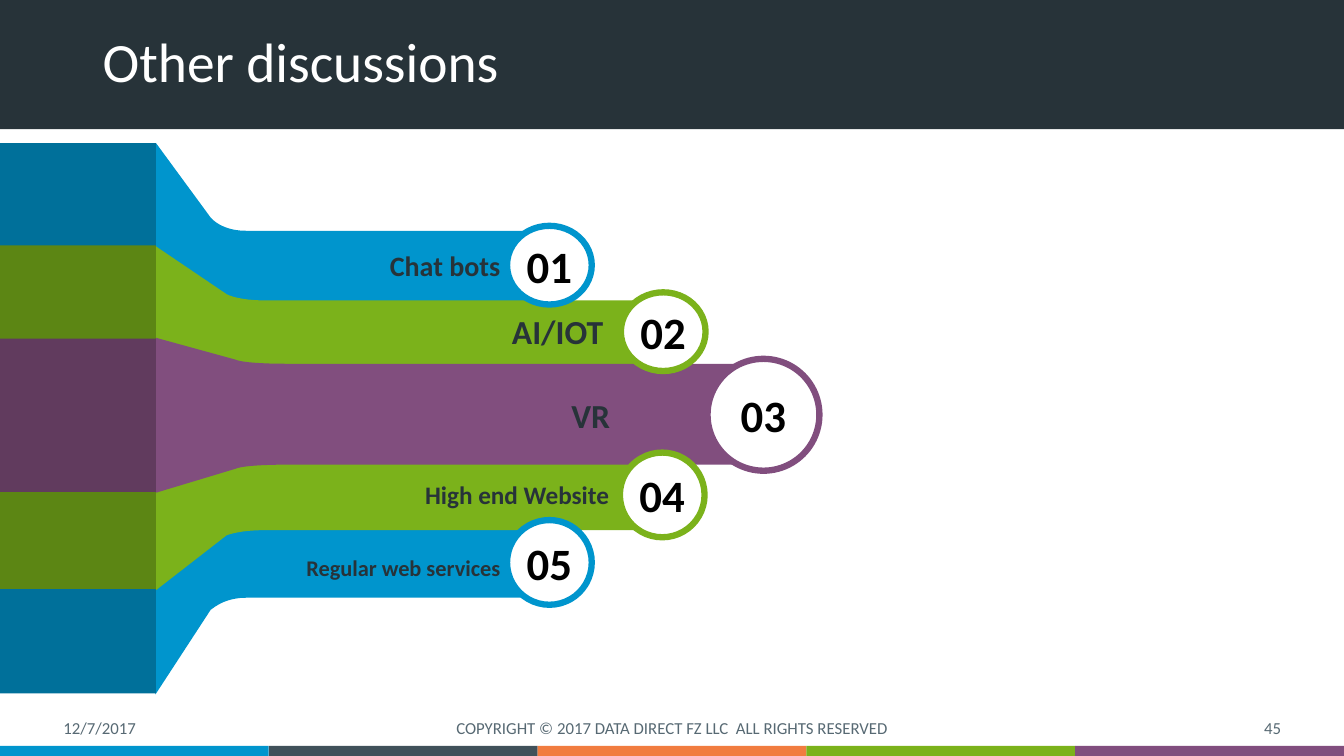
"""Build the "Other discussions" slide: five ribbons fanning out to numbered topics."""
from dataclasses import dataclass
from typing import Iterator

from pptx import Presentation
from pptx.dml.color import RGBColor
from pptx.enum.shapes import MSO_SHAPE
from pptx.enum.text import MSO_ANCHOR, MSO_AUTO_SIZE, PP_ALIGN
from pptx.shapes.autoshape import Shape
from pptx.shapes.shapetree import SlideShapes
from pptx.text.text import TextFrame
from pptx.util import Pt

WHITE = RGBColor(0xFF, 0xFF, 0xFF)
BLACK = RGBColor(0x00, 0x00, 0x00)
INK = RGBColor(0x27, 0x33, 0x39)
SLATE = RGBColor(0x40, 0x51, 0x5A)
GREY = RGBColor(0x57, 0x69, 0x73)
ORANGE = RGBColor(0xF1, 0x7C, 0x3F)
BLUE = RGBColor(0x00, 0x95, 0xCD)
GREEN = RGBColor(0x7B, 0xB2, 0x1B)
PURPLE = RGBColor(0x81, 0x4E, 0x7E)
DARK_BLUE = RGBColor(0x00, 0x70, 0x9A)
DARK_GREEN = RGBColor(0x5C, 0x86, 0x14)
DARK_PURPLE = RGBColor(0x61, 0x3B, 0x5E)

FONT = "Calibri"
SLIDE_WIDTH, SLIDE_HEIGHT = 960, 540
STRIPE_COLORS = (BLUE, SLATE, ORANGE, GREEN, PURPLE)
STRIPE_TOP, STRIPE_HEIGHT = 532.8, 7.2
ROOT_WIDTH = 111.4
BEND_STEPS = 12

Point = tuple[float, float]
Box = tuple[float, float, float, float]


@dataclass(frozen=True)
class Edge:
    """One ribbon edge: its root corner, then the cubic bend into the level run."""
    corner: Point
    bend: tuple[Point, Point, Point, Point]

    def points(self) -> list[Point]:
        """Return the corner followed by points along the bend."""
        return [self.corner, *bend_points(self.bend)]


@dataclass(frozen=True)
class Ribbon:
    """A ribbon that reaches from the root block to its right end."""
    color: RGBColor
    right: float
    upper: Edge
    lower: Edge


@dataclass(frozen=True)
class Root:
    """A dark block at the left margin."""
    color: RGBColor
    top: float
    height: float


@dataclass(frozen=True)
class Topic:
    """A topic label with its numbered badge."""
    label: str
    label_box: Box
    size: float
    badge_box: Box
    color: RGBColor


@dataclass(frozen=True)
class FooterItem:
    """A piece of footer text."""
    text: str
    left: float
    width: float
    align: PP_ALIGN


RIBBONS = (
    Ribbon(BLUE, 401,
           Edge((111.4, 102.2), ((150.5, 155.5), (151.2, 156.2), (158.4, 164.9), (175.7, 164.9))),
           Edge((111, 496.1), ((150.5, 435.6), (151.9, 434.9), (159.8, 427), (175.7, 427)))),
    Ribbon(GREEN, 462.2,
           Edge((111, 175.7), ((162, 210.2), (166.3, 212.4), (175.7, 214.6), (189.4, 214.6))),
           Edge((111, 421.9), ((162, 382.3), (166.3, 380.9), (174.2, 378.7), (189.4, 378.7)))),
    Ribbon(PURPLE, 540.7,
           Edge((111, 241.2), ((168.5, 257), (168.5, 257), (172.8, 259.9), (207.4, 259.9))),
           Edge((111, 352.1), ((168.5, 334.8), (168.5, 334.8), (172.8, 331.9), (207.4, 331.9)))),
)
ROOTS = (
    Root(DARK_BLUE, 102.2, 393.1),
    Root(DARK_GREEN, 175.2, 245.5),
    Root(DARK_PURPLE, 241.9, 109.4),
)
TOPICS = (
    Topic("Chat bots", (271.4, 173.5, 94.3, 31.7), 20, (362.2, 161.3, 60.5, 56.2), BLUE),
    Topic("AI/IOT", (358.6, 218.2, 85.7, 36), 24, (443.5, 208.8, 60.5, 56.2), GREEN),
    Topic("VR", (401, 278.6, 42.5, 36), 24, (505.4, 256.3, 79.9, 79.9), PURPLE),
    Topic("High end Website", (296.6, 339.1, 146.9, 28.8), 18, (442.8, 323.3, 60.5, 60.5), GREEN),
    Topic("Regular web services", (211.7, 392.4, 154.8, 26.6), 16, (362.2, 371.5, 60.5, 60.5), BLUE),
)
FOOTER = (
    FooterItem("12/7/2017", 38.2, 216, PP_ALIGN.LEFT),
    FooterItem("COPYRIGHT © 2017 DATA DIRECT FZ LLC  ALL RIGHTS RESERVED", 318.2, 324, PP_ALIGN.CENTER),
    FooterItem("45", 706.3, 216, PP_ALIGN.RIGHT),
)


def bend_points(bend: tuple[Point, Point, Point, Point]) -> Iterator[Point]:
    """Yield evenly stepped points along a cubic curve."""
    for step in range(BEND_STEPS + 1):
        t = step / BEND_STEPS
        weights = ((1 - t) ** 3, 3 * t * (1 - t) ** 2, 3 * t * t * (1 - t), t ** 3)
        x, y = (sum(w * p[axis] for w, p in zip(weights, bend)) for axis in (0, 1))
        yield x, y


def paint(shape: Shape, color: RGBColor) -> None:
    """Give a shape a flat fill without outline or shadow."""
    shape.shadow.inherit = False
    shape.fill.solid()
    shape.fill.fore_color.rgb = color
    shape.line.fill.background()


def add_block(shapes: SlideShapes, kind: MSO_SHAPE, box: Box, color: RGBColor) -> Shape:
    """Add a flat preset shape."""
    block = shapes.add_shape(kind, *map(Pt, box))
    paint(block, color)
    return block


def write(frame: TextFrame, text: str, size: float, color: RGBColor,
          align: PP_ALIGN = PP_ALIGN.LEFT, bold: bool = False, wrap: bool = True) -> None:
    """Write one vertically centred line into a text frame."""
    frame.word_wrap = wrap
    frame.auto_size = MSO_AUTO_SIZE.NONE if wrap else MSO_AUTO_SIZE.SHAPE_TO_FIT_TEXT
    frame.vertical_anchor = MSO_ANCHOR.MIDDLE
    line = frame.paragraphs[0]
    line.alignment = align
    run = line.add_run()
    run.text = text
    run.font.name, run.font.size, run.font.bold = FONT, Pt(size), bold
    run.font.color.rgb = color


def add_ribbon(shapes: SlideShapes, ribbon: Ribbon) -> None:
    """Add a ribbon as a closed outline."""
    upper, lower = ribbon.upper.points(), ribbon.lower.points()
    ends = [(ribbon.right, upper[-1][1]), (ribbon.right, lower[-1][1])]
    outline = [(Pt(x), Pt(y)) for x, y in upper + ends + lower[::-1]]
    builder = shapes.build_freeform(*outline[0])
    builder.add_line_segments(outline[1:], close=True)
    paint(builder.convert_to_shape(), ribbon.color)


def add_badge(shapes: SlideShapes, number: int, topic: Topic) -> None:
    """Add the numbered circle of a topic."""
    badge = add_block(shapes, MSO_SHAPE.OVAL, topic.badge_box, WHITE)
    badge.line.color.rgb = topic.color
    badge.line.width = Pt(4.5)
    frame = badge.text_frame
    frame.margin_left = frame.margin_right = frame.margin_top = frame.margin_bottom = Pt(3.6)
    write(frame, f"{number:02}", 32, BLACK, PP_ALIGN.CENTER, bold=True)


def main() -> None:
    """Draw the slide and save it."""
    deck = Presentation()
    deck.slide_width, deck.slide_height = Pt(SLIDE_WIDTH), Pt(SLIDE_HEIGHT)
    slide = deck.slides.add_slide(deck.slide_layouts[5])
    shapes = slide.shapes

    header = add_block(shapes, MSO_SHAPE.RECTANGLE, (0, -0.7, SLIDE_WIDTH, 92.9), INK)
    title = shapes.title
    header._element.addnext(title._element)
    title.left, title.top, title.width, title.height = map(Pt, (66.2, 19.4, 828, 53.3))
    write(title.text_frame, "Other discussions", 39.6, WHITE)
    title.text_frame.paragraphs[0].line_spacing = 0.9

    stripe_width = SLIDE_WIDTH / len(STRIPE_COLORS)
    for index, color in enumerate(STRIPE_COLORS):
        stripe_box = (index * stripe_width, STRIPE_TOP, stripe_width, STRIPE_HEIGHT)
        add_block(shapes, MSO_SHAPE.RECTANGLE, stripe_box, color)
    for item in FOOTER:
        note = shapes.add_textbox(*map(Pt, (item.left, 509, item.width, 22.3)))
        write(note.text_frame, item.text, 12, GREY, item.align)

    for ribbon in RIBBONS:
        add_ribbon(shapes, ribbon)
    for root in ROOTS:
        add_block(shapes, MSO_SHAPE.RECTANGLE, (0, root.top, ROOT_WIDTH, root.height), root.color)
    for number, topic in enumerate(TOPICS, start=1):
        add_badge(shapes, number, topic)
        label = shapes.add_textbox(*map(Pt, topic.label_box))
        write(label.text_frame, topic.label, topic.size, INK, bold=True, wrap=False)

    deck.save("out.pptx")


if __name__ == "__main__":
    main()
